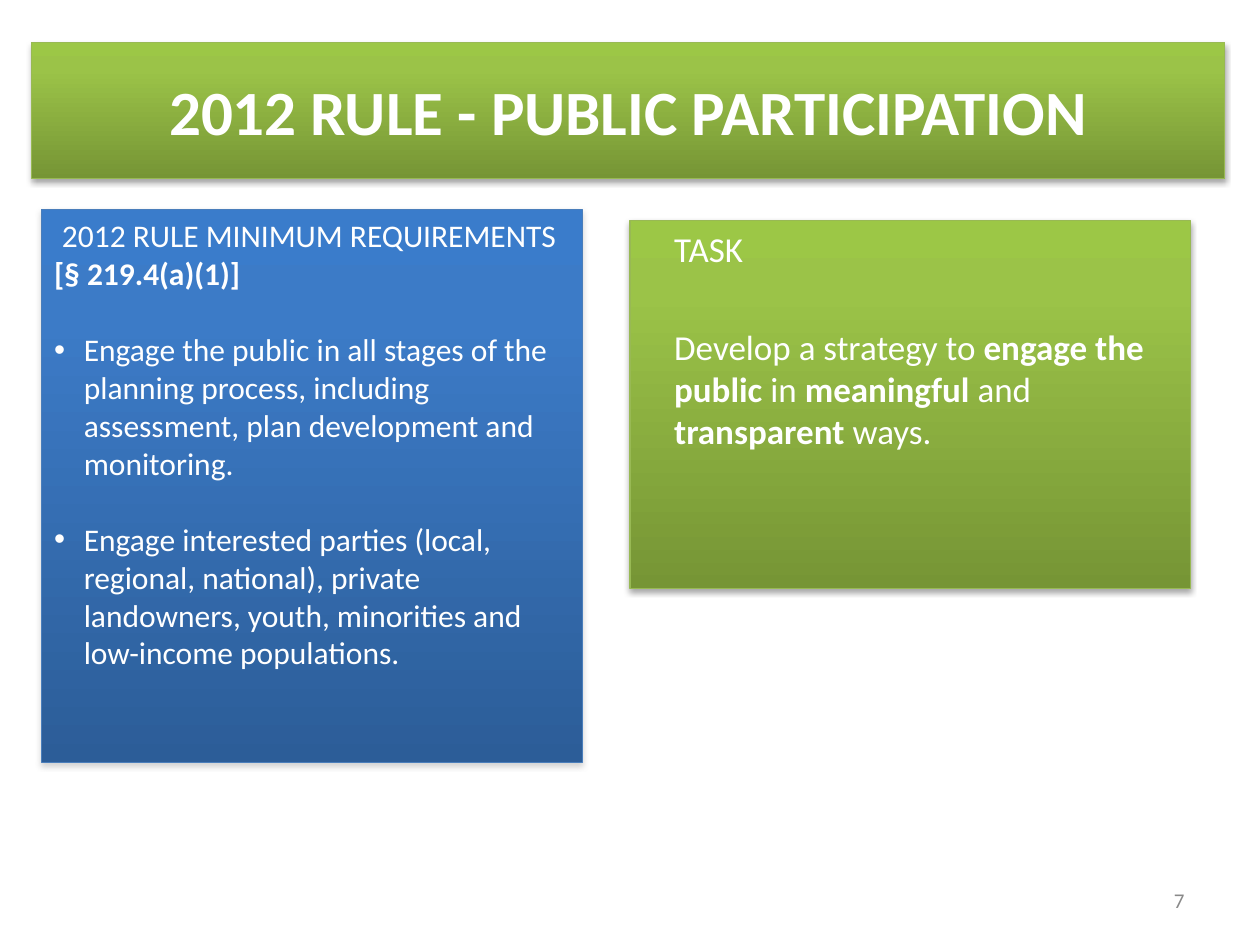
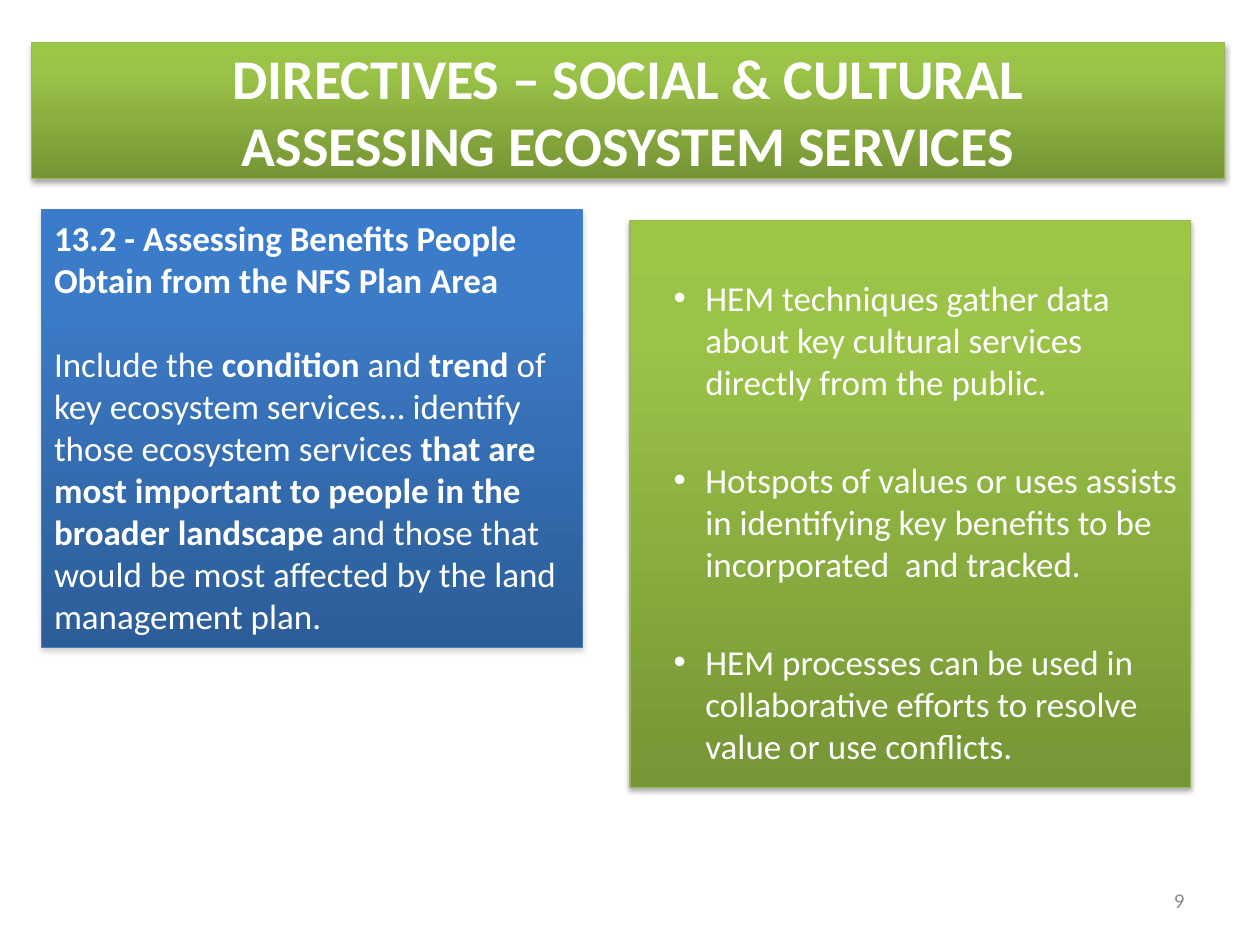
"""Build two planning-rule slides with a title band and two text panels each."""
from copy import deepcopy

from lxml import etree
from pptx import Presentation
from pptx.dml.color import RGBColor
from pptx.enum.shapes import MSO_SHAPE
from pptx.enum.text import MSO_ANCHOR, MSO_AUTO_SIZE, PP_ALIGN
from pptx.oxml.ns import qn
from pptx.util import Cm, Pt

RECTANGLE = MSO_SHAPE.RECTANGLE
TOP, MIDDLE = MSO_ANCHOR.TOP, MSO_ANCHOR.MIDDLE
LEFT, CENTER, RIGHT = PP_ALIGN.LEFT, PP_ALIGN.CENTER, PP_ALIGN.RIGHT
NO_AUTOFIT = MSO_AUTO_SIZE.NONE

FONT = "Calibri"
WHITE = RGBColor(0xFF, 0xFF, 0xFF)
GRAY = RGBColor(0x89, 0x89, 0x89)
GREEN = {
    "stops": [RGBColor(0x9C, 0xC7, 0x46), RGBColor(0x9B, 0xC3, 0x48), RGBColor(0x76, 0x95, 0x35)],
    "line": RGBColor(0x98, 0xB9, 0x54),
    "shadow": RGBColor(0x00, 0x00, 0x00),
}
BLUE = {
    "stops": [RGBColor(0x3A, 0x7C, 0xCB), RGBColor(0x3C, 0x7B, 0xC7), RGBColor(0x2C, 0x5D, 0x98)],
    "line": RGBColor(0x4A, 0x7E, 0xBB),
    "shadow": RGBColor(0x80, 0x80, 0x80),
}
STOP_POSITIONS = (0, 0.2, 1)
SHADOW = {"blurRad": "40000", "dist": "23000", "dir": "5400000", "rotWithShape": "0"}

PLAIN = {"margin": 0, "hang": 0}
NUDGED = {"margin": 0.16, "hang": 0}
BULLET = {"margin": 0.6, "hang": 0.6}
INSET = {"margin": 0.64, "hang": 0}
INSET_BULLET = {"margin": 1.27, "hang": 0.64}

SLIDES = [
    {
        "title": "2012 RULE - PUBLIC PARTICIPATION",
        "title_size": 36,
        "number": "7",
        "task_height": 7.41,
        "task_top_margin": 0.13,
        "task": [
            (INSET, 0, "TASK"),
            (INSET, 32, "Develop a strategy to *engage the public* in *meaningful* and *transparent* ways."),
        ],
        "rule_height": 11.14,
        "rule_size": 18,
        "rule": [
            (NUDGED, 2, "2012 RULE MINIMUM REQUIREMENTS"),
            (PLAIN, 0, "*[§ 219.4(a)(1)]*"),
            (BULLET, 22, "Engage the public in all stages of the planning process, including "
                         "assessment, plan development and monitoring."),
            (BULLET, 22, "Engage interested parties (local, regional, national), private "
                         "landowners, youth, minorities and low-income populations."),
        ],
    },
    {
        "title": "DIRECTIVES – SOCIAL & CULTURAL\vASSESSING ECOSYSTEM SERVICES",
        "title_size": 32,
        "number": "9",
        "task_height": 11.43,
        "task_top_margin": 1.13,
        "task": [
            (INSET_BULLET, 0, "HEM techniques gather data about key cultural services directly from the public."),
            (INSET_BULLET, 32, "Hotspots of values or uses assists in identifying key benefits to be "
                               "incorporated  and tracked."),
            (INSET_BULLET, 32, "HEM processes can be used in collaborative efforts to resolve value or "
                               "use conflicts."),
        ],
        "rule_height": 8.82,
        "rule_size": 20,
        "rule": [
            (PLAIN, 0, "*13.2 - Assessing Benefits People Obtain from the NFS Plan Area*"),
            (PLAIN, 24, "Include the *condition* and *trend* of key ecosystem services… identify those "
                        "ecosystem services *that are most important to people in the broader landscape *"
                        "and those that would be most affected by the land management plan."),
        ],
    },
]


def paint_panel(panel, place, palette):
    """Place a panel and give it a three-stop gradient, outline and soft shadow."""
    for name, length in zip(("left", "top", "width", "height"), place):
        setattr(panel, name, Cm(length))
    panel.fill.gradient()
    panel.fill.gradient_angle = 270
    stop_list = panel._element.spPr.find(".//" + qn("a:gsLst"))
    stop_list.append(deepcopy(stop_list[-1]))
    for stop, position, color in zip(panel.fill.gradient_stops, STOP_POSITIONS, palette["stops"]):
        stop.position = position
        stop.color.rgb = color
    panel.line.color.rgb = palette["line"]
    panel.line.width = Pt(0.75)
    panel.shadow.inherit = False
    effects = panel._element.spPr.find(qn("a:effectLst"))
    shadow = etree.SubElement(effects, qn("a:outerShdw"), SHADOW)
    tint = etree.SubElement(shadow, qn("a:srgbClr"), val=str(palette["shadow"]))
    etree.SubElement(tint, qn("a:alpha"), val="35000")


def write_text(box, paras, size, color=WHITE, align=LEFT, anchor=TOP, top_margin=0.13):
    """Fill a box with paragraphs, setting the words between asterisks in bold."""
    frame = box.text_frame
    frame_format = {"word_wrap": True, "auto_size": NO_AUTOFIT, "vertical_anchor": anchor,
                    "margin_left": Cm(0.25), "margin_right": Cm(0.25),
                    "margin_top": Cm(top_margin), "margin_bottom": Cm(0.13)}
    for name, value in frame_format.items():
        setattr(frame, name, value)
    for index, (style, gap, text) in enumerate(paras):
        para = frame.paragraphs[0] if index == 0 else frame.add_paragraph()
        para.alignment = align
        para.space_before = Pt(gap)
        properties = para._p.get_or_add_pPr()
        properties.set("marL", str(Cm(style["margin"])))
        properties.set("indent", str(-Cm(style["hang"])))
        if style["hang"]:
            etree.SubElement(properties, qn("a:buFont"), typeface="Arial")
            etree.SubElement(properties, qn("a:buChar"), char="•")
        else:
            etree.SubElement(properties, qn("a:buNone"))
        for part, words in enumerate(text.split("*")):
            for line_index, line in enumerate(words.split("\v")):
                if line_index:
                    para.add_line_break()
                if line:
                    span = para.add_run()
                    span.text = line
                    span.font.color.rgb = color
                    span_format = {"name": FONT, "size": Pt(size), "bold": part % 2 == 1}
                    for name, value in span_format.items():
                        setattr(span.font, name, value)


deck = Presentation()
deck.slide_width, deck.slide_height = Cm(25.4), Cm(19.05)
layout = deck.slide_layouts[1]

for content in SLIDES:
    page = deck.slides.add_slide(layout)

    title = page.shapes.title
    paint_panel(title, (0.64, 0.85, 24.05, 2.75), GREEN)
    write_text(title, [(PLAIN, 0, f"*{content['title']}*")], content["title_size"],
               align=CENTER, anchor=MIDDLE)

    number = page.shapes.add_textbox(Cm(18.2), Cm(17.65), Cm(5.93), Cm(1.01))
    write_text(number, [(PLAIN, 0, content["number"])], 12, GRAY, RIGHT, MIDDLE)

    task = page.placeholders[1]
    paint_panel(task, (12.7, 4.45, 11.3, content["task_height"]), GREEN)
    write_text(task, content["task"], 20, top_margin=content["task_top_margin"])

    rule = page.shapes.add_shape(RECTANGLE, 0, 0, 0, 0)
    paint_panel(rule, (0.84, 4.23, 10.9, content["rule_height"]), BLUE)
    write_text(rule, content["rule"], content["rule_size"])

deck.save("out.pptx")
